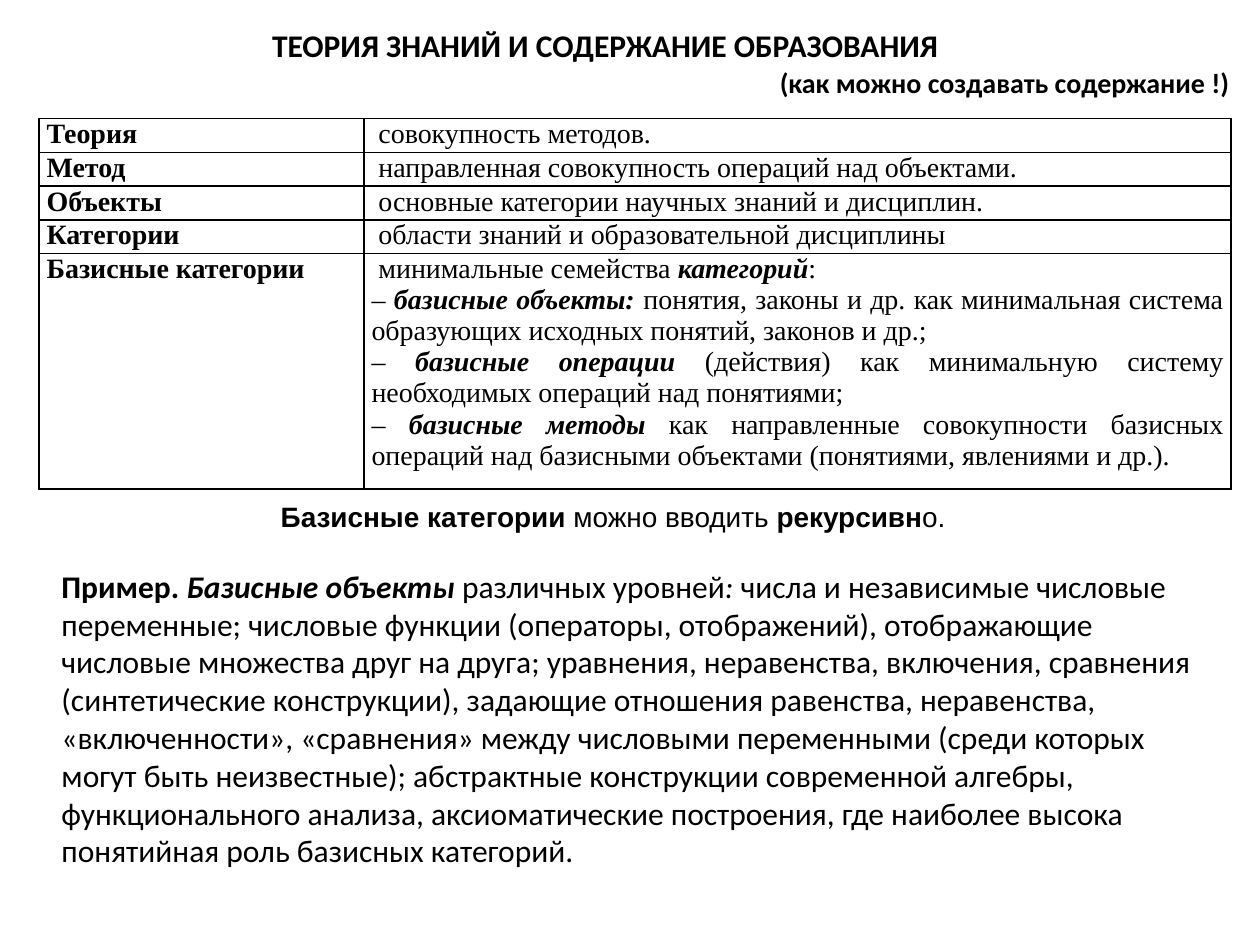
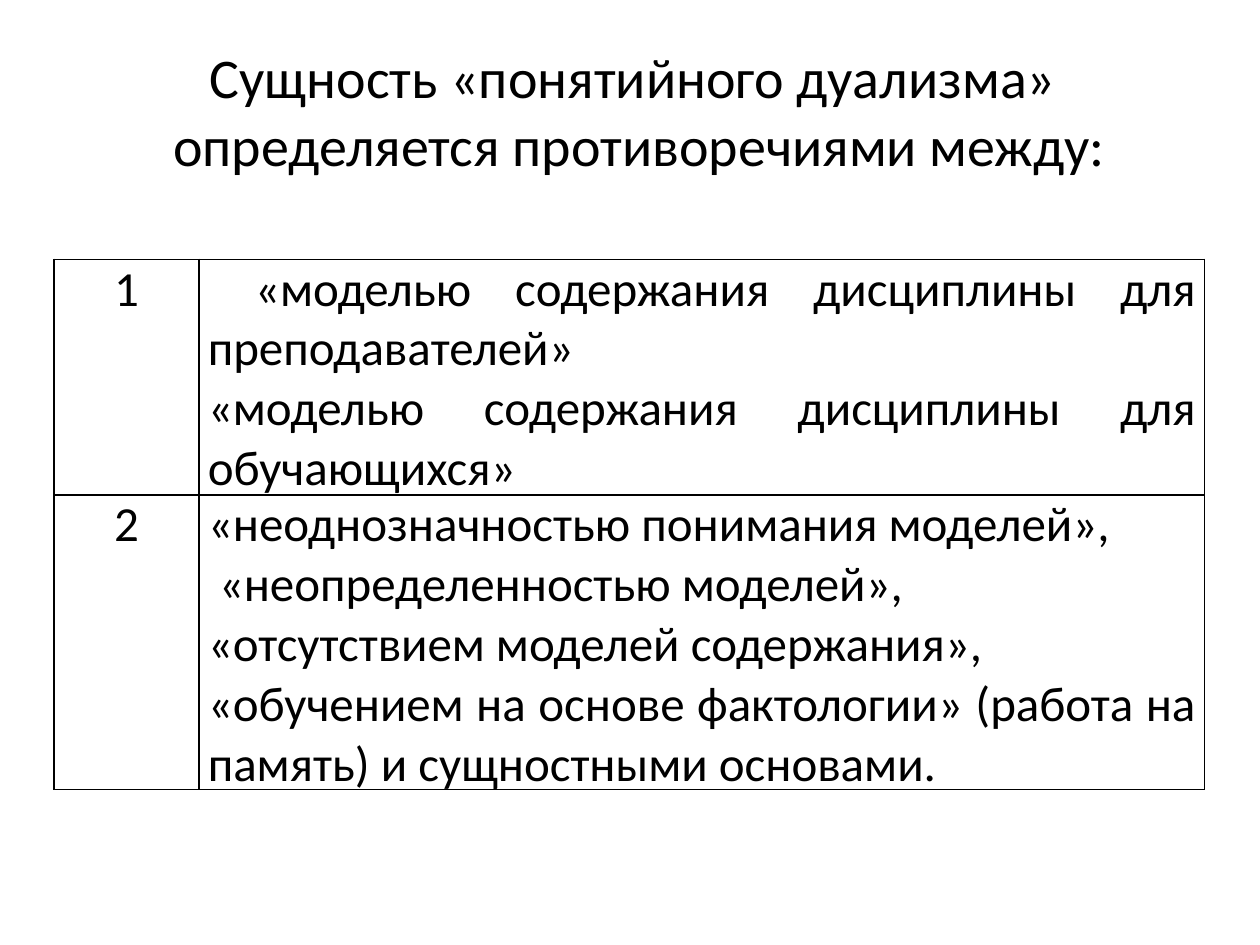
"""Build two slides on the theory of knowledge and conceptual dualism."""
from dataclasses import dataclass

import pptx
import pptx.dml.color
import pptx.enum.text
import pptx.oxml
import pptx.oxml.ns
import pptx.presentation
import pptx.slide
import pptx.text.text
import pptx.util

Cm = pptx.util.Cm
Pt = pptx.util.Pt
Align = pptx.enum.text.PP_ALIGN
Anchor = pptx.enum.text.MSO_ANCHOR


@dataclass(frozen=True)
class Theme:
    ink: str = "000000"
    border: float = 1
    sans: str = "Calibri"
    plain: str = "Arial"
    serif: str = "Times New Roman"
    small: int = 16
    body: int = 18
    cell: int = 28
    title: int = 32


@dataclass(frozen=True)
class Span:
    text: str
    bold: bool = False
    italic: bool = False


@dataclass(frozen=True)
class Para:
    spans: tuple[Span, ...]
    align: Align = Align.LEFT
    indent: float = 0


@dataclass(frozen=True)
class Style:
    font: str
    size: int


@dataclass(frozen=True)
class TextBox:
    at: tuple[float, float, float, float]
    style: Style
    paras: tuple[Para, ...]
    wrap: bool = True
    anchor: Anchor = Anchor.TOP


@dataclass(frozen=True)
class Grid:
    left: float
    top: float
    cols: tuple[float, ...]
    rows: tuple[float, ...]
    inset: float
    style: Style
    cells: tuple[tuple[tuple[Para, ...], ...], ...]


THEME = Theme()


def para(text: str, align: Align = Align.JUSTIFY, indent: float = 0, bold: bool = False) -> Para:
    """Return a paragraph made of a single span."""
    return Para((Span(text, bold),), align, indent)


def dash_item(term: str, meaning: str) -> Para:
    """Return a dashed definition with an emphasised term."""
    return Para((Span("– "), Span(term, True, True), Span(meaning)), Align.JUSTIFY)


def apply(target: object, values: dict[str, object]) -> None:
    """Set every attribute named in the dict."""
    for name, value in values.items():
        setattr(target, name, value)


def write(tf: pptx.text.text.TextFrame, paras: tuple[Para, ...], style: Style) -> None:
    """Fill a text frame with styled paragraphs."""
    for i, item in enumerate(paras):
        p = tf.paragraphs[0] if i == 0 else tf.add_paragraph()
        p.alignment = item.align
        if item.indent:
            p._p.get_or_add_pPr().set("indent", str(Cm(item.indent)))
        for span in item.spans:
            r = p.add_run()
            r.text = span.text
            apply(r.font, {"name": style.font, "size": Pt(style.size),
                           "bold": span.bold, "italic": span.italic})
            r.font.color.rgb = pptx.dml.color.RGBColor.from_string(THEME.ink)


def draw_text(s: pptx.slide.Slide, box: TextBox) -> None:
    """Draw one text box."""
    tf = s.shapes.add_textbox(*map(Cm, box.at)).text_frame
    apply(tf, {"word_wrap": box.wrap, "vertical_anchor": box.anchor})
    write(tf, box.paras, box.style)


def add_borders(cell: object) -> None:
    """Outline all four sides of a table cell."""
    ns = pptx.oxml.ns.nsdecls("a")
    for side in ("lnL", "lnR", "lnT", "lnB"):
        cell._tc.get_or_add_tcPr().append(pptx.oxml.parse_xml(
            f'<a:{side} {ns} w="{Pt(THEME.border)}"><a:solidFill>'
            f'<a:srgbClr val="{THEME.ink}"/></a:solidFill></a:{side}>'))


def draw_grid(s: pptx.slide.Slide, grid: Grid) -> None:
    """Draw one bordered table without fills."""
    table = s.shapes.add_table(
        len(grid.rows), len(grid.cols), Cm(grid.left), Cm(grid.top),
        Cm(sum(grid.cols)), Cm(sum(grid.rows))).table
    apply(table, {"first_row": False, "horz_banding": False})
    for col, width in zip(table.columns, grid.cols):
        col.width = Cm(width)
    for row, height, contents in zip(table.rows, grid.rows, grid.cells):
        row.height = Cm(height)
        for cell, paras in zip(row.cells, contents):
            apply(cell, {"margin_left": Cm(grid.inset), "margin_right": Cm(grid.inset),
                         "margin_top": 0, "margin_bottom": 0})
            add_borders(cell)
            cell.fill.background()
            write(cell.text_frame, paras, grid.style)


DEFINITIONS = (
    ("Теория", "совокупность методов."),
    ("Метод", "направленная совокупность операций над объектами."),
    ("Объекты", "основные категории научных знаний и дисциплин."),
    ("Категории", "области знаний и образовательной дисциплины"),
)
BASIS = (
    Para((Span("минимальные семейства "), Span("категорий", True, True), Span(":")),
         Align.JUSTIFY, 0.14),
    dash_item("базисные объекты: ", "понятия, законы и др. как минимальная система "
              "образующих исходных понятий, законов и др.;"),
    dash_item("базисные операции", " (действия) как минимальную систему "
              "необходимых операций над понятиями;"),
    dash_item("базисные методы", " как направленные совокупности базисных операций "
              "над базисными объектами (понятиями, явлениями и др.)."),
)
THEORY_TABLE = Grid(
    0.79, 2.39, (6.55, 17.48), (0.68,) * 4 + (4.75,), 0.15, Style(THEME.serif, THEME.small),
    tuple(((para(term, bold=True),), (para(meaning, indent=0.14),))
          for term, meaning in DEFINITIONS)
    + (((para("Базисные категории", bold=True),), BASIS),))
THEORY_TEXTS = (
    TextBox((4.37, 0.41, 15.67, 1.02), Style(THEME.sans, THEME.body),
            (para("ТЕОРИЯ ЗНАНИЙ И СОДЕРЖАНИЕ ОБРАЗОВАНИЯ", Align.CENTER, bold=True),)),
    TextBox((15.47, 1.19, 9.68, 0.94), Style(THEME.sans, THEME.small),
            (para("(как можно создавать содержание !)", Align.LEFT, bold=True),), wrap=False),
    TextBox((4.17, 9.93, 16.08, 0.94), Style(THEME.plain, THEME.small),
            (Para((Span("Базисные категории", True), Span(" можно вводить "),
                   Span("рекурсивн", True), Span("о.")), Align.JUSTIFY, 1.24),),
            anchor=Anchor.MIDDLE),
    TextBox((0.99, 11.3, 23.62, 6.4), Style(THEME.sans, THEME.body),
            (Para((Span("Пример. ", True), Span("Базисные объекты ", True, True),
                   Span("различных уровней"), Span(": ", italic=True),
                   Span("числа и независимые числовые переменные; числовые функции "
                        "(операторы, отображений), отображающие числовые множества друг на "
                        "друга; уравнения, неравенства, включения, сравнения (синтетические "
                        "конструкции), задающие отношения равенства, неравенства, "
                        "«включенности», «сравнения» между числовыми переменными (среди "
                        "которых могут быть неизвестные); абстрактные конструкции современной "
                        "алгебры, функционального анализа, аксиоматические построения, где "
                        "наиболее высока понятийная роль базисных категорий."))),)),
)

DUALISM_TEXTS = (
    TextBox((1.09, 0.74, 23.6, 3), Style(THEME.sans, THEME.title),
            (para("Сущность «понятийного дуализма» ", Align.CENTER),
             para("определяется противоречиями между:", Align.CENTER))),
)
DUALISM_TABLE = Grid(
    1.09, 5.23, (2.92, 20.27), (4.75, 5.92), 0.18, Style(THEME.sans, THEME.cell),
    (((para("1", Align.CENTER),),
      (para("«моделью содержания дисциплины для преподавателей»", indent=0.95),
       para("«моделью содержания дисциплины для обучающихся»"))),
     ((para("2", Align.CENTER),),
      (para("«неоднозначностью понимания моделей»,"),
       para("«неопределенностью моделей»,", indent=0.22),
       para("«отсутствием моделей содержания»,"),
       para("«обучением на основе фактологии» (работа на память) "
            "и сущностными основами.")))))


def add_slide(prs: pptx.presentation.Presentation, texts: tuple[TextBox, ...], grid: Grid) -> None:
    """Add a blank slide with its texts and table."""
    s = prs.slides.add_slide(prs.slide_layouts[6])
    for box in texts:
        draw_text(s, box)
    draw_grid(s, grid)


def main() -> None:
    """Build and save the presentation."""
    prs = pptx.Presentation()
    apply(prs, {"slide_width": Cm(25.4), "slide_height": Cm(19.05)})
    add_slide(prs, THEORY_TEXTS, THEORY_TABLE)
    add_slide(prs, DUALISM_TEXTS, DUALISM_TABLE)
    prs.save("out.pptx")


if __name__ == "__main__":
    main()
